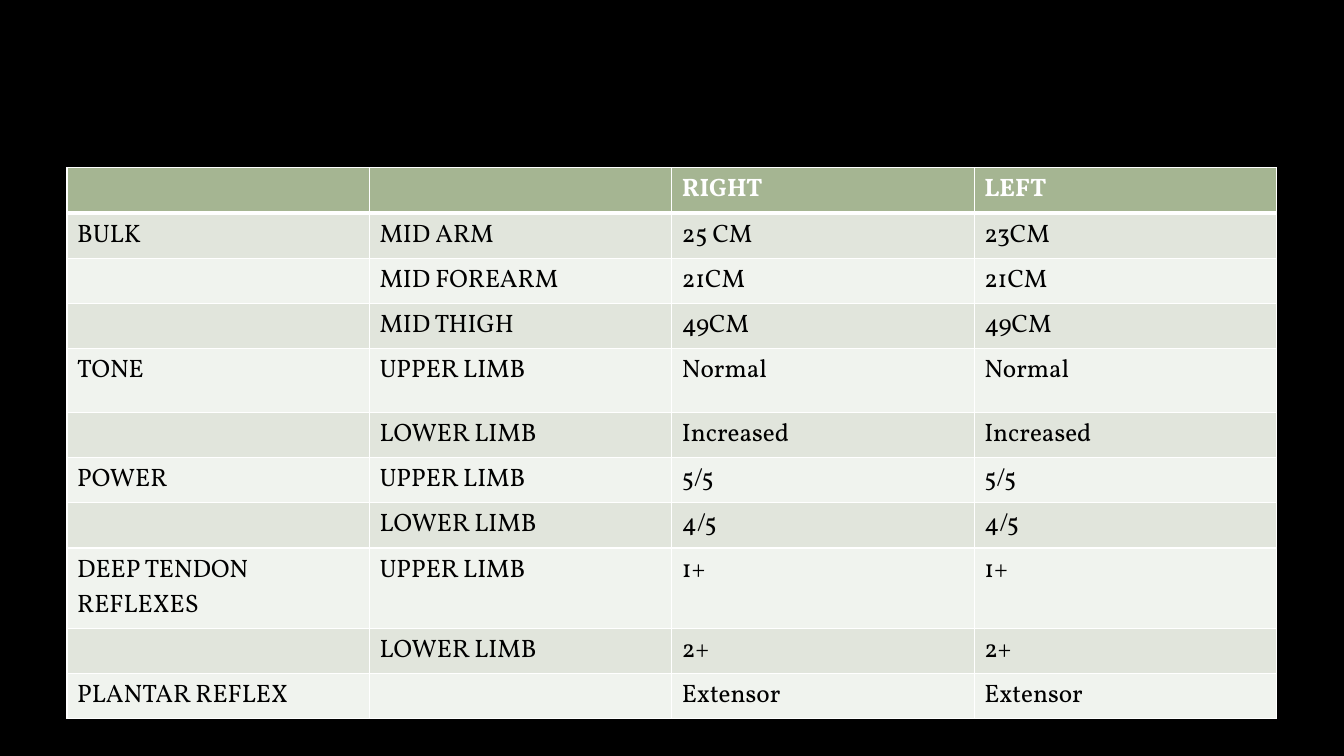
from pptx import Presentation
from pptx.dml.color import RGBColor
from pptx.oxml.ns import qn
from pptx.util import Cm, Pt
from lxml.etree import SubElement

FINDINGS = [
    ("", "", "RIGHT", "LEFT"),
    ("BULK", "MID ARM", "25 CM", "23CM"),
    ("", "MID FOREARM", "21CM", "21CM"),
    ("", "MID THIGH", "49CM", "49CM"),
    ("TONE", "UPPER LIMB", "Normal", "Normal"),
    ("", "LOWER LIMB", "Increased", "Increased"),
    ("POWER", "UPPER LIMB", "5/5", "5/5"),
    ("", "LOWER LIMB", "4/5", "4/5"),
    ("DEEP TENDON REFLEXES", "UPPER LIMB", "1+", "1+"),
    ("", "LOWER LIMB", "2+", "2+"),
    ("PLANTAR REFLEX", "", "Extensor", "Extensor"),
]
ROW_HEIGHT = 1.04
SPECIAL_HEIGHTS = {4: 1.6, 8: 1.57, 9: 0.84}


def color(value):
    return RGBColor.from_string(value)


class ExamSlide:
    font_name = "Vollkorn"
    font_size = 18
    header_fill = "A5B592"
    band_fills = ("F0F3EE", "E1E5DC")
    grid_color = "FFFFFF"

    def __init__(self, presentation):
        self.slide = presentation.slides.add_slide(presentation.slide_layouts[6])

    def background(self, value):
        fill = self.slide.background.fill
        fill.solid()
        fill.fore_color.rgb = color(value)

    def borders(self, cell, top, bottom):
        properties = cell._tc.get_or_add_tcPr()
        for side, width in (("L", 1), ("R", 1), ("T", top), ("B", bottom)):
            line = SubElement(properties, qn(f"a:ln{side}"), w=str(Pt(width)))
            solid = SubElement(line, qn("a:solidFill"))
            SubElement(solid, qn("a:srgbClr"), val=self.grid_color)

    def cell(self, cell, wording, row):
        header = row == 0
        self.borders(cell, 3 if row == 1 else 1, 3 if header else 1)
        cell.fill.solid()
        cell.fill.fore_color.rgb = color(
            self.header_fill if header else self.band_fills[row % 2])
        cell.text = wording
        font = cell.text_frame.paragraphs[0].font
        font.name = self.font_name
        font.size = Pt(self.font_size)
        font.bold = header
        font.color.rgb = color("FFFFFF" if header else "000000")

    def table(self, rows, left, top, column_width):
        heights = [SPECIAL_HEIGHTS.get(row, ROW_HEIGHT) for row in range(len(rows))]
        columns = len(rows[0])
        table = self.slide.shapes.add_table(
            len(rows), columns, Cm(left), Cm(top),
            Cm(columns * column_width), Cm(sum(heights))).table
        for column in table.columns:
            column.width = Cm(column_width)
        for row, (findings, height) in enumerate(zip(rows, heights)):
            table.rows[row].height = Cm(height)
            for column, wording in enumerate(findings):
                self.cell(table.cell(row, column), wording, row)


def main():
    presentation = Presentation()
    presentation.slide_width = Cm(33.87)
    presentation.slide_height = Cm(19.05)
    exam = ExamSlide(presentation)
    exam.background("000000")
    exam.table(FINDINGS, left=1.69, top=4.23, column_width=7.62)
    presentation.save("out.pptx")


if __name__ == "__main__":
    main()
